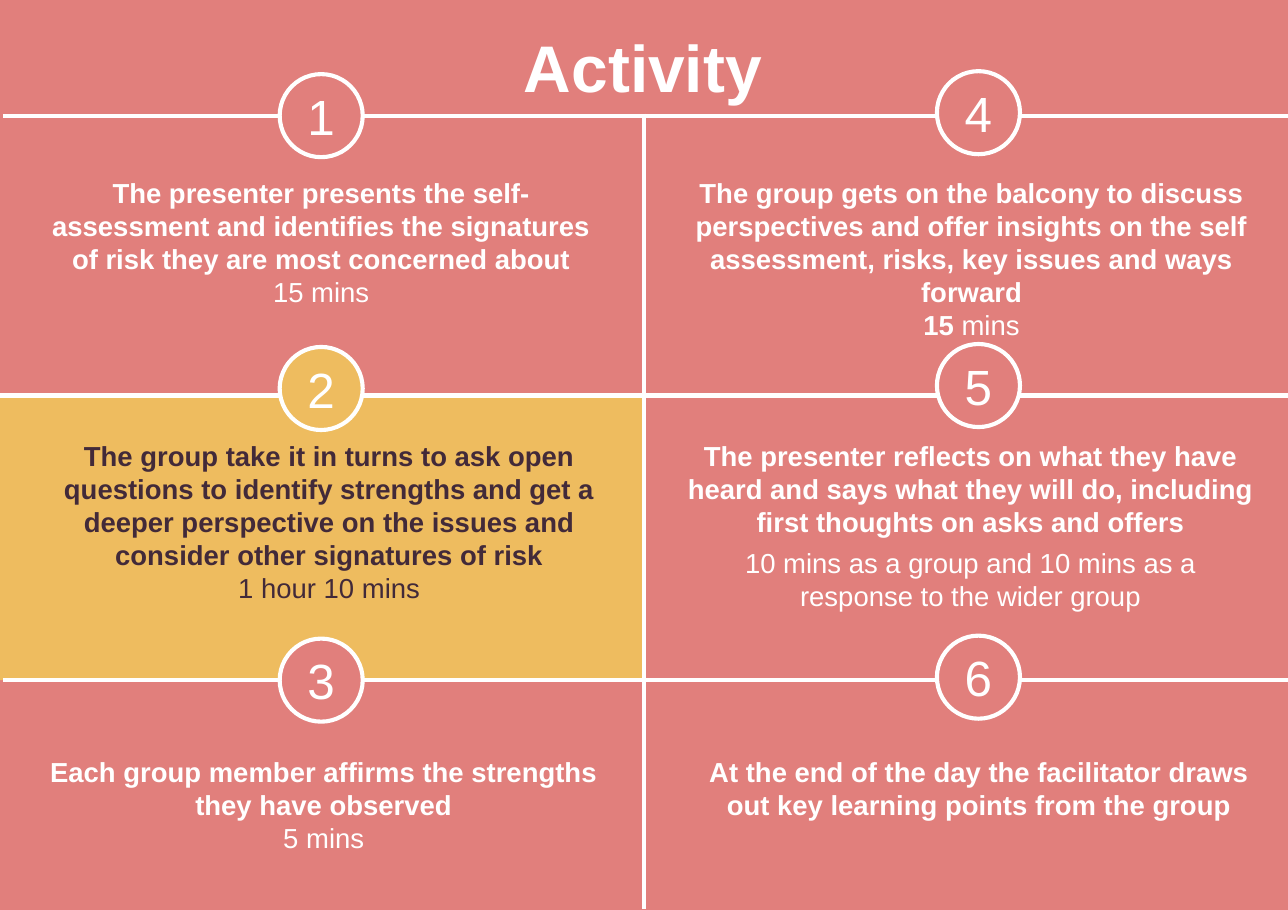
from pptx import Presentation
from pptx.dml.color import RGBColor
from pptx.enum.shapes import MSO_CONNECTOR, MSO_SHAPE
from pptx.enum.text import MSO_ANCHOR, MSO_AUTO_SIZE, PP_ALIGN
from pptx.oxml.ns import qn
from pptx.util import Cm, Inches, Pt
from lxml import etree

ROSE = RGBColor(0xE1, 0x7F, 0x7C)
GOLD = RGBColor(0xEE, 0xBC, 0x5F)
PLUM = RGBColor(0x42, 0x2A, 0x39)
WHITE = RGBColor(0xFF, 0xFF, 0xFF)
RECT, OVAL = MSO_SHAPE.RECTANGLE, MSO_SHAPE.OVAL
LINE = MSO_CONNECTOR.STRAIGHT
TOP, MIDDLE = MSO_ANCHOR.TOP, MSO_ANCHOR.MIDDLE
CENTER = PP_ALIGN.CENTER
FIXED = MSO_AUTO_SIZE.NONE

WIDTH, HEIGHT = Cm(33.1), Cm(23.38)
MID, RIGHT = 6.52, 13.05
RULES = [(-0.03, 4), (0.03, 6.88), (0.03, 1.17)]
DISC = 0.84
COLUMNS = [(2.83, 0.75), (9.48, 0.72)]
DROPS = [0, 2.76, 5.71]

STEPS = [
    (0.27, 1.68, 5.96, WHITE, 0, [
        ("The presenter presents the self-assessment and identifies the "
         "signatures of risk they are most concerned about", ""),
        ("", "15 mins")]),
    (0.27, 4.34, 6.12, PLUM, 6, [
        ("The group take it in turns to ask open questions to identify "
         "strengths and get a deeper perspective on the issues and "
         "consider other signatures of risk\n", "1 hour 10 mins")]),
    (0.38, 7.54, 5.79, WHITE, 6, [
        ("Each group member affirms the strengths they have observed\n",
         "5 mins")]),
    (6.65, 1.68, 6.36, WHITE, 6, [
        ("The group gets on the balcony to discuss perspectives and offer "
         "insights on the self assessment, risks, key issues and ways "
         "forward\n15", " mins")]),
    (6.84, 4.34, 5.96, WHITE, 6, [
        ("The presenter reflects on what they have heard and says what "
         "they will do, including first thoughts on asks and offers", ""),
        ("", "10 mins as a group and 10 mins as a response to the wider "
         "group")]),
    (7.01, 7.54, 5.79, WHITE, 6, [
        ("At the end of the day the facilitator draws out key learning "
         "points from the group", "")]),
]


def write(frame, paras, size=20, color=WHITE, gap=0, anchor=TOP,
          inset=(0.1, 0.1)):
    """Fill a frame with paragraphs, each a pair of bold and plain text."""
    frame.word_wrap = True
    frame.auto_size = FIXED
    frame.vertical_anchor = anchor
    frame.margin_left = frame.margin_right = Inches(inset[0])
    frame.margin_top = frame.margin_bottom = Inches(inset[1])
    for i, pair in enumerate(paras):
        para = frame.add_paragraph() if i else frame.paragraphs[0]
        para.alignment = CENTER
        para.space_before = Pt(gap)
        for text, bold in zip(pair, (True, False)):
            for j, part in enumerate(text.split("\n")):
                if j:
                    para.add_line_break()
                if part:
                    run = para.add_run()
                    run.text = part
                    font = run.font
                    font.name, font.size, font.bold = "Arial", Pt(size), bold
                    font.color.rgb = color


def block(slide, kind, x, y, w, h, fill, edge=None):
    """Add a filled shape, with a line where an edge colour is given."""
    shape = slide.shapes.add_shape(
        kind, Inches(x), Inches(y), Inches(w), Inches(h))
    shape.shadow.inherit = False
    shape.fill.solid()
    shape.fill.fore_color.rgb = fill
    if edge is None:
        shape.line.fill.background()
    else:
        shape.line.color.rgb = edge
        shape.line.width = Pt(3)
    return shape


def rule(slide, x1, y1, x2, y2):
    """Add a white dividing line."""
    line = slide.shapes.add_connector(
        LINE, Inches(x1), Inches(y1), Inches(x2), Inches(y2))
    line.line.color.rgb = WHITE
    line.line.width = Pt(3)
    etree.SubElement(line._element.spPr, qn("a:effectLst"))


def head(slide, text):
    """Place and format the title."""
    title = slide.shapes.title
    title.left, title.top = Inches(4.51), Inches(0.21)
    title.width, title.height = Inches(3.99), Inches(0.78)
    write(title.text_frame, [(text, "")], size=48, inset=(0.13, 0.06))


def badge(slide, num, x, y, fill):
    """Add a numbered circle."""
    disc = block(slide, OVAL, x, y, DISC, DISC, fill, WHITE)
    write(disc.text_frame, [("", str(num))], size=36, anchor=MIDDLE)


def step(slide, x, y, w, color, gap, paras):
    """Add the text of one step."""
    box = slide.shapes.add_textbox(
        Inches(x), Inches(y), Inches(w), Inches(0.78))
    write(box.text_frame, paras, color=color, gap=gap)


def main():
    """Build the slide and save it."""
    deck = Presentation()
    deck.slide_width, deck.slide_height = WIDTH, HEIGHT
    slide = deck.slides.add_slide(deck.slide_layouts[5])
    slide.background.fill.solid()
    slide.background.fill.fore_color.rgb = ROSE

    head(slide, "Activity")
    block(slide, RECT, -0.03, 4, 6.54, 2.88, GOLD)
    rule(slide, MID, 1.15, MID, 9.19)
    for x, y in RULES:
        rule(slide, x, y, RIGHT, y)
    spots = [(x, y + drop) for x, y in COLUMNS for drop in DROPS]
    for num, (x, y) in enumerate(spots, 1):
        badge(slide, num, x, y, GOLD if num == 2 else ROSE)
    for item in STEPS:
        step(slide, *item)
    deck.save("out.pptx")


if __name__ == "__main__":
    main()
